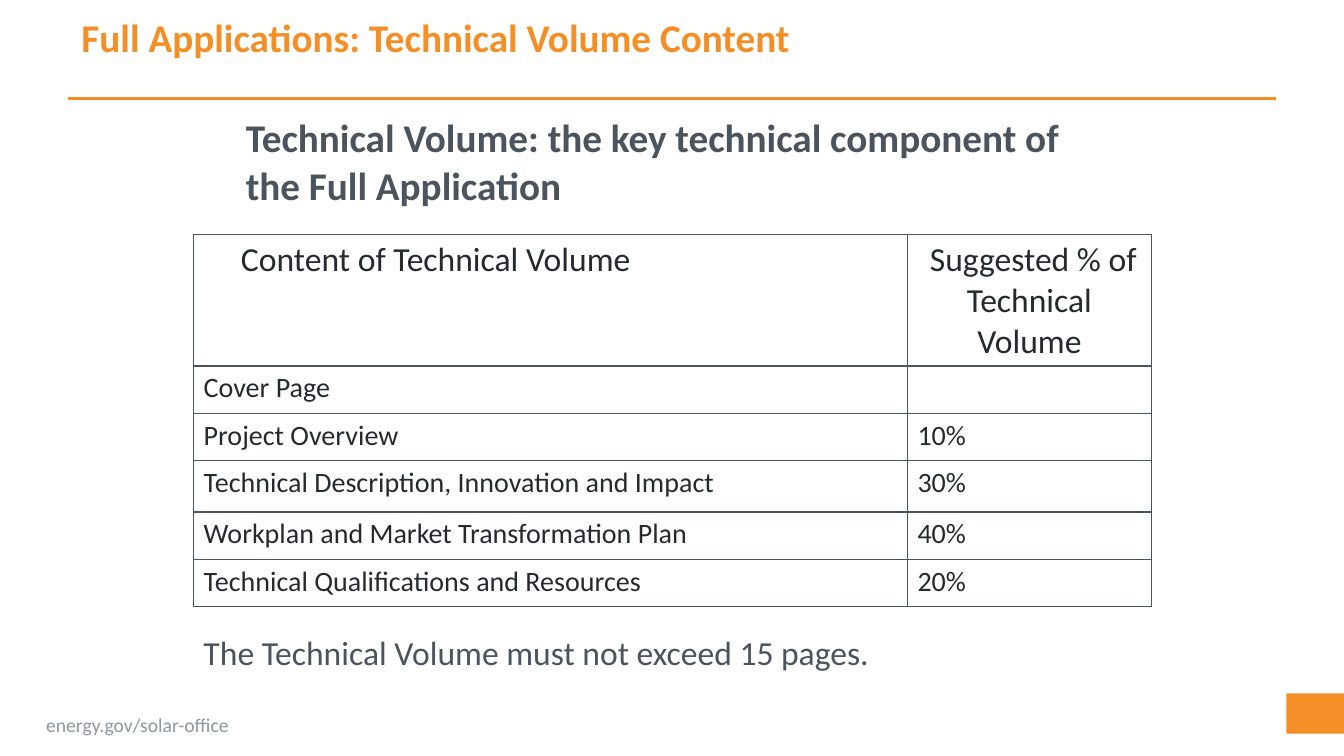
"""Build the slide on the content of the Technical Volume."""
from dataclasses import dataclass

import pptx
import pptx.dml.color
import pptx.enum.shapes
import pptx.enum.text
import pptx.oxml
import pptx.oxml.ns
import pptx.util

PX = 9144
FONT = "Calibri"
ORANGE, SLATE, GREY, INK, WHITE = "F38F26", "4B545D", "8D98A3", "252A2F", "FFFFFF"
COLUMN_WIDTHS = (708, 242)
ROW_HEIGHTS = (130, 47, 47, 51, 47, 47)
TABLE_LEFT, TABLE_TOP = 192, 233
HEADER_INDENT = 37
CONTENT = (
    ("Content of Technical Volume", " Suggested % of Technical Volume"),
    ("Cover Page", ""),
    ("Project Overview", "10%"),
    ("Technical Description, Innovation and Impact", "30%"),
    ("Workplan and Market Transformation Plan", "40%"),
    ("Technical Qualifications and Resources", "20%"),
)


@dataclass(frozen=True)
class Label:
    text: str
    left: int
    top: int
    width: int
    height: int
    size: int
    color: str
    bold: bool = False
    wrap: bool = True
    line_spacing: float = 1.0


LABELS = (
    Label("energy.gov/solar-office", 36, 702, 204, 34, 14, GREY, wrap=False),
    Label("Full Applications: Technical Volume Content",
          71, 8, 1062, 75, 28, ORANGE, bold=True),
    Label("Technical Volume: the key technical component of the Full Application",
          234, 108, 883, 100, 28, SLATE, bold=True),
    Label("The Technical Volume must not exceed 15 pages.",
          192, 614, 696, 55, 24, SLATE, line_spacing=1.2),
)


def px(length: int) -> pptx.util.Emu:
    """Turn px into EMU."""
    return pptx.util.Emu(length * PX)


def rgb(value: str) -> pptx.dml.color.RGBColor:
    """Turn a hex string into a colour."""
    return pptx.dml.color.RGBColor.from_string(value)


def style_text(para, size: int, color: str, bold: bool = False) -> None:
    """Format every run of a paragraph."""
    for span in para.runs:
        span.font.name = FONT
        span.font.size = pptx.util.Pt(size)
        span.font.bold = bold
        span.font.color.rgb = rgb(color)


def add_label(page, label: Label) -> None:
    """Add one text box."""
    box = page.shapes.add_textbox(
        px(label.left), px(label.top), px(label.width), px(label.height))
    box.text_frame.word_wrap = label.wrap
    box.text_frame.text = label.text
    para = box.text_frame.paragraphs[0]
    para.line_spacing = label.line_spacing
    style_text(para, label.size, label.color, label.bold)


def add_rule(page) -> None:
    """Add the line under the title."""
    rule = page.shapes.add_connector(
        pptx.enum.shapes.MSO_CONNECTOR.STRAIGHT, px(67), px(98), px(1266), px(98))
    rule.line.color.rgb = rgb(ORANGE)
    rule.line.width = pptx.util.Pt(2)
    rule.element.spPr.append(pptx.oxml.parse_xml(
        f'<a:effectLst {pptx.oxml.ns.nsdecls("a")}/>'))


def add_corner(page) -> None:
    """Add the orange block at the lower right."""
    corner = page.shapes.add_shape(
        pptx.enum.shapes.MSO_SHAPE.RECTANGLE, px(1276), px(688), px(57), px(40))
    corner.shadow.inherit = False
    corner.fill.solid()
    corner.fill.fore_color.rgb = rgb(ORANGE)
    corner.line.fill.background()


def add_borders(cell) -> None:
    """Draw a thin line on each side of a cell."""
    properties = cell._tc.get_or_add_tcPr()
    for side in "LRTB":
        properties.append(pptx.oxml.parse_xml(
            f'<a:ln{side} {pptx.oxml.ns.nsdecls("a")} w="{pptx.util.Pt(1)}">'
            f'<a:solidFill><a:srgbClr val="{SLATE}"/></a:solidFill></a:ln{side}>'))


def add_content_table(page) -> None:
    """Add the table of sections and their shares."""
    table = page.shapes.add_table(
        len(ROW_HEIGHTS), len(COLUMN_WIDTHS), px(TABLE_LEFT), px(TABLE_TOP),
        px(sum(COLUMN_WIDTHS)), px(sum(ROW_HEIGHTS))).table
    table.first_row = False
    table.horz_banding = False
    for column, width in zip(table.columns, COLUMN_WIDTHS):
        column.width = px(width)
    for row, height, texts in zip(table.rows, ROW_HEIGHTS, CONTENT):
        row.height = px(height)
        for cell, text in zip(row.cells, texts):
            add_borders(cell)
            cell.fill.solid()
            cell.fill.fore_color.rgb = rgb(WHITE)
            cell.text_frame.text = text
            is_header = texts is CONTENT[0]
            style_text(cell.text_frame.paragraphs[0], 24 if is_header else 20, INK)
    section, share = (cell.text_frame.paragraphs[0] for cell in table.rows[0].cells)
    section._p.get_or_add_pPr().set("marL", str(px(HEADER_INDENT)))
    share.alignment = pptx.enum.text.PP_ALIGN.CENTER


def main() -> None:
    """Build and save the deck."""
    deck = pptx.Presentation()
    deck.slide_width, deck.slide_height = px(1333), px(750)
    page = deck.slides.add_slide(deck.slide_layouts[6])
    add_rule(page)
    add_corner(page)
    for label in LABELS:
        add_label(page, label)
    add_content_table(page)
    deck.save("out.pptx")


if __name__ == "__main__":
    main()
